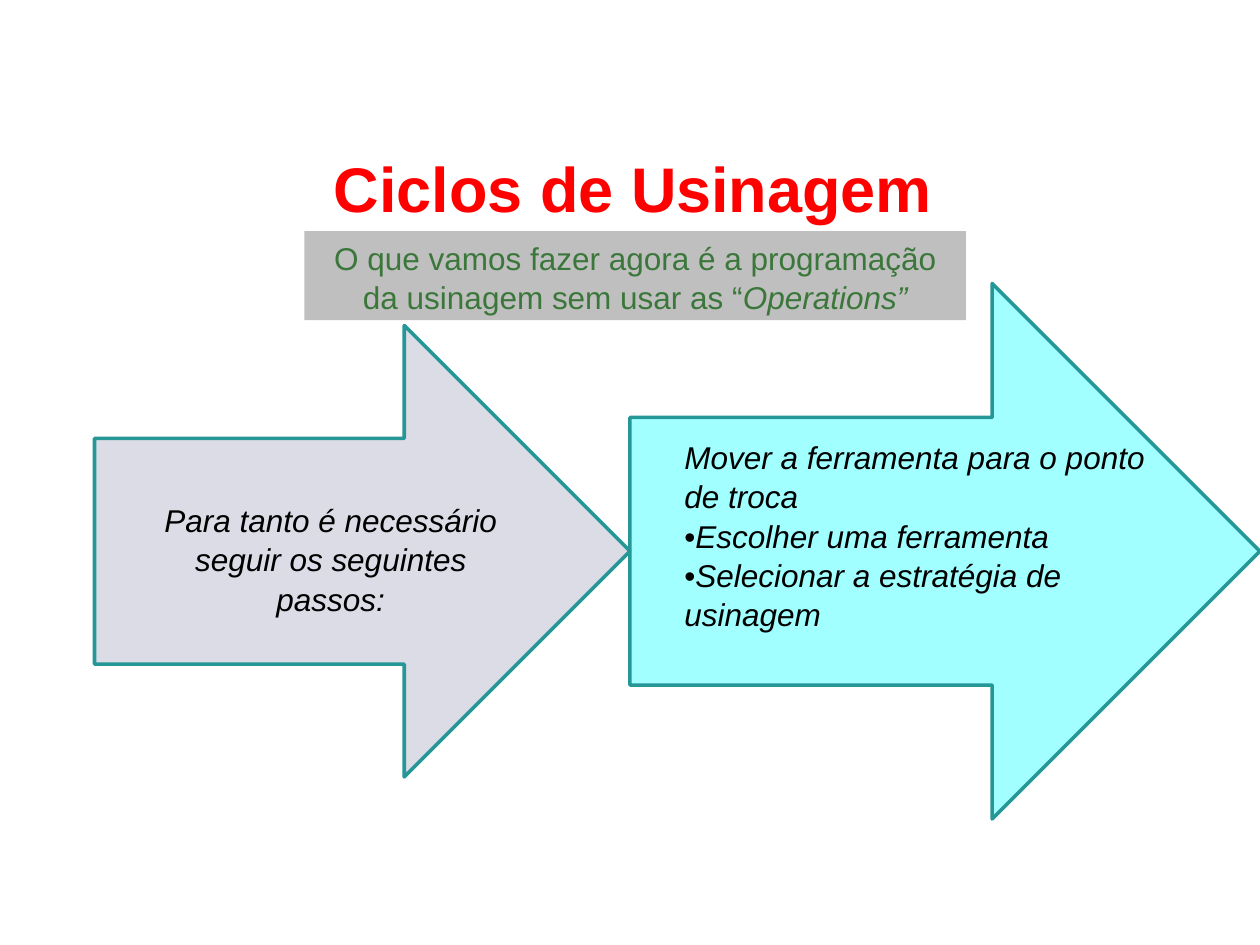
from lxml import etree
from pptx import Presentation
from pptx.dml.color import RGBColor
from pptx.enum.shapes import MSO_SHAPE
from pptx.enum.text import MSO_ANCHOR, MSO_AUTO_SIZE, PP_ALIGN
from pptx.oxml.ns import qn
from pptx.util import Pt

RIGHT_ARROW = MSO_SHAPE.RIGHT_ARROW
RECTANGLE = MSO_SHAPE.RECTANGLE
TOP, BOTTOM = MSO_ANCHOR.TOP, MSO_ANCHOR.BOTTOM
LEFT, CENTER = PP_ALIGN.LEFT, PP_ALIGN.CENTER
NO_AUTOFIT = MSO_AUTO_SIZE.NONE
FIT_SHAPE = MSO_AUTO_SIZE.SHAPE_TO_FIT_TEXT

RED = RGBColor(0xFF, 0x00, 0x00)
GREEN = RGBColor(0x3B, 0x77, 0x3B)
BLACK = RGBColor(0x00, 0x00, 0x00)
GRAY = RGBColor(0xBF, 0xBF, 0xBF)
CYAN = RGBColor(0x0A, 0xFF, 0xFF)
LAVENDER = RGBColor(0xA3, 0xA3, 0xC2)
TEAL = RGBColor(0x26, 0x97, 0x97)


class SlideBuilder:
    """Holds the text style and the slide being built."""

    font_name = "Arial"
    body_size = 18
    title_size = 36
    body_spacing = 1.04
    arrow_opacity = 38

    def __init__(self, slide):
        self.slide = slide

    def fill_text(self, shape, paragraphs, color, align, size=body_size,
                  bold=False, spacing=body_spacing, anchor=TOP, auto_size=FIT_SHAPE):
        """Fill a shape with paragraphs, each a list of (text, italic) runs."""
        frame = shape.text_frame
        frame_format = {"word_wrap": True, "vertical_anchor": anchor,
                        "auto_size": auto_size}
        for name, value in frame_format.items():
            setattr(frame, name, value)
        for index, runs in enumerate(paragraphs):
            paragraph = frame.paragraphs[0] if index == 0 else frame.add_paragraph()
            paragraph_format = {"alignment": align, "line_spacing": spacing,
                                "space_before": Pt(0), "space_after": Pt(0)}
            for name, value in paragraph_format.items():
                setattr(paragraph, name, value)
            for text, italic in runs:
                run = paragraph.add_run()
                run.text = text
                font_format = {"name": self.font_name, "size": Pt(size),
                               "bold": bold, "italic": italic}
                for name, value in font_format.items():
                    setattr(run.font, name, value)
                run.font.color.rgb = color

    def title(self, box, text):
        title = self.slide.shapes.title
        for name, value in zip(("left", "top", "width", "height"), box):
            setattr(title, name, Pt(value))
        self.fill_text(title, [[(text, False)]], RED, CENTER, size=self.title_size,
                       bold=True, spacing=1.0, anchor=BOTTOM, auto_size=NO_AUTOFIT)

    def shape(self, kind, box, color):
        shape = self.slide.shapes.add_shape(kind, *map(Pt, box))
        shape.shadow.inherit = False
        shape.fill.solid()
        shape.fill.fore_color.rgb = color
        return shape

    def arrow(self, box, color):
        arrow = self.shape(RIGHT_ARROW, box, color)
        arrow.line.color.rgb = TEAL
        arrow.line.width = Pt(2)
        fill_color = arrow.element.spPr.find(qn("a:solidFill"))[0]
        alpha = etree.SubElement(fill_color, qn("a:alpha"))
        alpha.set("val", str(self.arrow_opacity * 1000))

    def banner(self, box, paragraphs):
        banner = self.shape(RECTANGLE, box, GRAY)
        banner.line.fill.background()
        self.fill_text(banner, paragraphs, GREEN, CENTER)

    def text(self, box, paragraphs, align):
        text_box = self.slide.shapes.add_textbox(*map(Pt, box))
        self.fill_text(text_box, paragraphs, BLACK, align)


def main():
    presentation = Presentation()
    presentation.slide_width, presentation.slide_height = Pt(720), Pt(540)
    title_only = presentation.slide_layouts[5]
    builder = SlideBuilder(presentation.slides.add_slide(title_only))

    # Arrows: the second starts at the tip of the first
    builder.arrow((360, 162, 360, 306), CYAN)
    builder.arrow((54, 186, 306, 258), LAVENDER)

    # Heading and introduction
    builder.title((36, 75.6, 651.6, 56.9), "Ciclos de Usinagem")
    builder.banner((174, 132, 378, 51), [[
        ("O que vamos fazer agora é a programação da usinagem sem usar as “", False),
        ("Operations”", True),
    ]])

    # Arrow texts, with upright bullets before the italic steps
    builder.text((78, 282, 222, 72.7),
                 [[("Para tanto é necessário seguir os seguintes passos:", True)]],
                 CENTER)
    steps = ["Escolher uma ferramenta", "Selecionar a estratégia de usinagem"]
    builder.text((384, 246, 282, 116.6),
                 [[("Mover a ferramenta para o ponto de troca", True)]]
                 + [[("•", False), (step, True)] for step in steps],
                 LEFT)

    presentation.save("out.pptx")


if __name__ == "__main__":
    main()
